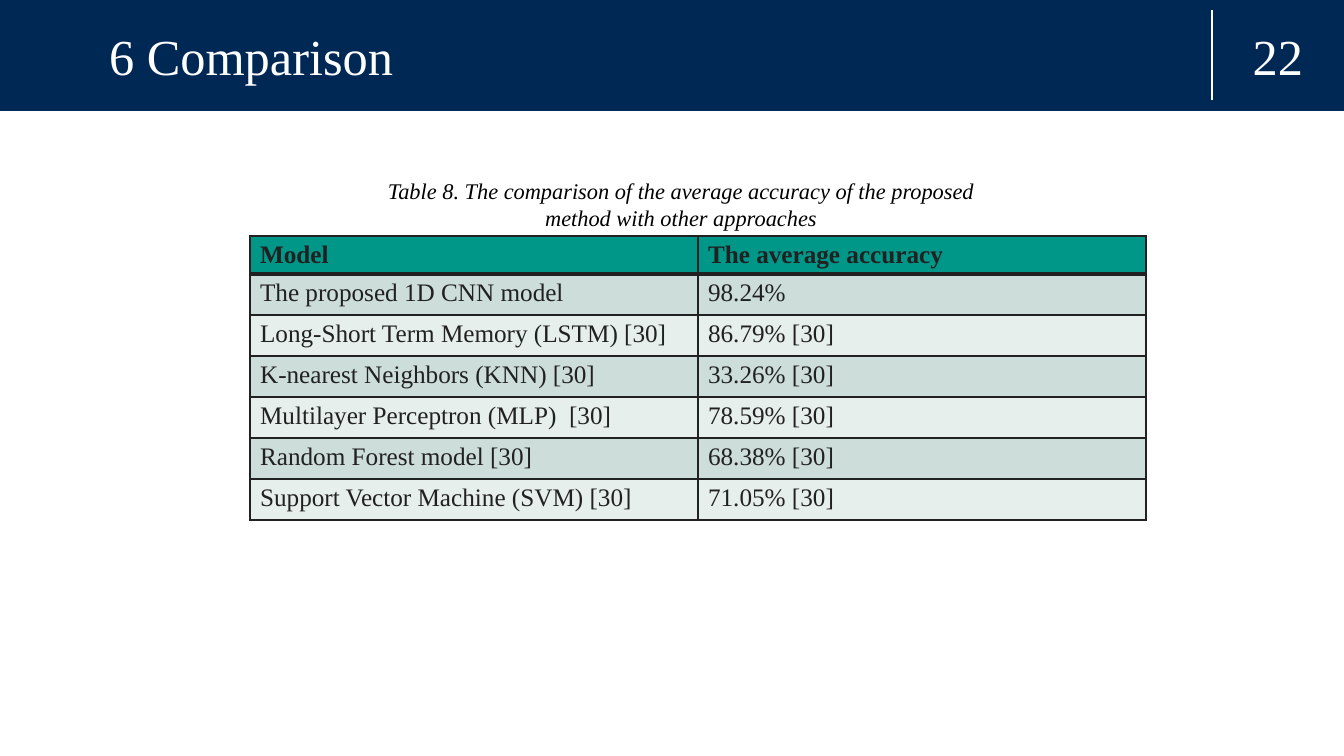
from dataclasses import dataclass

from lxml import etree
from pptx import Presentation
from pptx import util as u
from pptx.dml.color import RGBColor
from pptx.enum import shapes, text
from pptx.oxml.ns import qn

EMU_PER_PX = 914400 / 100.8


@dataclass(frozen=True)
class Theme:
    font: str = "Times New Roman"
    white: str = "FFFFFF"
    black: str = "000000"
    ink: str = "212121"
    navy: str = "002855"
    teal: str = "009688"
    bands: tuple[str, str] = ("CCDDDA", "E7EFED")
    heading_pt: int = 36
    table_pt: int = 18
    caption_pt: int = 16


@dataclass(frozen=True)
class Box:
    left: int
    top: int
    width: int
    height: int

    def emu(self) -> tuple[int, int, int, int]:
        return px(self.left), px(self.top), px(self.width), px(self.height)


@dataclass(frozen=True)
class Panel:
    box: Box
    color: str
    line_pt: float


@dataclass(frozen=True)
class Result:
    model: str
    accuracy: str


THEME = Theme()
PANELS = (
    Panel(Box(0, 111, 1344, 645), THEME.white, 2),
    Panel(Box(0, 0, 1344, 111), THEME.navy, 0.75),
)
TITLE_BOX = Box(74, 10, 1117, 90)
NUMBER_BOX = Box(1212, 10, 132, 90)
CAPTION_BOX = Box(345, 172, 672, 64)
TABLE_BOX = Box(250, 236, 896, 284)
HEADER_HEIGHT, ROW_HEIGHT = 38, 41
THIN_PT, THICK_PT = 1, 3
HEADER = Result("Model", "The average accuracy")
RESULTS = (
    Result("The proposed 1D CNN model", "98.24%"),
    Result("Long-Short Term Memory (LSTM) [30]", "86.79% [30]"),
    Result("K-nearest Neighbors (KNN) [30]", "33.26% [30]"),
    Result("Multilayer Perceptron (MLP)  [30]", "78.59% [30]"),
    Result("Random Forest model [30]", "68.38% [30]"),
    Result("Support Vector Machine (SVM) [30]", "71.05% [30]"),
)


def px(n: int) -> int:
    return round(n * EMU_PER_PX)


def rgb(color: str) -> RGBColor:
    return RGBColor.from_string(color)


def write(tf, content: str, *, size: int, color: str, bold: bool = False,
          italic: bool = False, align=text.PP_ALIGN.LEFT) -> None:
    p = tf.paragraphs[0]
    p.alignment = align
    r = p.add_run()
    r.text = content
    r.font.name, r.font.size = THEME.font, u.Pt(size)
    r.font.bold, r.font.italic = bold, italic
    r.font.color.rgb = rgb(color)


def center_vertically(tf, *, left: int = 10) -> None:
    tf.word_wrap = True
    tf.auto_size = text.MSO_AUTO_SIZE.NONE
    tf.vertical_anchor = text.MSO_ANCHOR.MIDDLE
    tf.margin_left = px(left)
    tf.margin_right = tf.margin_top = tf.margin_bottom = px(10)


def add_panel(s, panel: Panel) -> None:
    sp = s.shapes.add_shape(shapes.MSO_SHAPE.RECTANGLE, *panel.box.emu())
    sp.shadow.inherit = False
    sp.fill.solid()
    sp.fill.fore_color.rgb = rgb(panel.color)
    sp.line.color.rgb = rgb(panel.color)
    sp.line.width = u.Pt(panel.line_pt)


def add_divider(s, box: Box) -> None:
    """Draw a vertical rule along the left edge of the box."""
    x = px(box.left)
    line = s.shapes.add_connector(shapes.MSO_CONNECTOR.STRAIGHT, x,
                                  px(box.top + box.height), x, px(box.top))
    line.line.color.rgb = rgb(THEME.white)
    line.line.width = u.Pt(1.5)
    etree.SubElement(line.element.spPr, qn("a:effectLst"))


def set_borders(cell, *, top: float, bottom: float) -> None:
    tc_pr = cell._tc.get_or_add_tcPr()
    widths = {"lnL": THIN_PT, "lnR": THIN_PT, "lnT": top, "lnB": bottom}
    for side, width in widths.items():
        ln = etree.SubElement(tc_pr, qn(f"a:{side}"), w=str(u.Pt(width)))
        fill = etree.SubElement(ln, qn("a:solidFill"))
        etree.SubElement(fill, qn("a:srgbClr"), val=THEME.ink)


def add_results_table(s) -> None:
    rows = (HEADER, *RESULTS)
    table = s.shapes.add_table(len(rows), 2, *TABLE_BOX.emu()).table
    table.horz_banding = False
    for i, result in enumerate(rows):
        is_header = i == 0
        table.rows[i].height = px(HEADER_HEIGHT if is_header else ROW_HEIGHT)
        color = THEME.teal if is_header else THEME.bands[(i - 1) % 2]
        for j, content in enumerate((result.model, result.accuracy)):
            cell = table.cell(i, j)
            set_borders(cell, top=THICK_PT if i == 1 else THIN_PT,
                        bottom=THICK_PT if is_header else THIN_PT)
            cell.fill.solid()
            cell.fill.fore_color.rgb = rgb(color)
            write(cell.text_frame, content, size=THEME.table_pt,
                  color=THEME.ink, bold=is_header)


def place_title(s, content: str) -> None:
    title = s.shapes.title
    title.left, title.top, title.width, title.height = TITLE_BOX.emu()
    center_vertically(title.text_frame, left=35)
    write(title.text_frame, content, size=THEME.heading_pt, color=THEME.white)
    # Bring the title in front of the banner.
    title.element.getparent().append(title.element)


def main() -> None:
    prs = Presentation()
    prs.slide_width, prs.slide_height = px(1344), px(756)
    s = prs.slides.add_slide(prs.slide_layouts[5])
    s.background.fill.solid()
    s.background.fill.fore_color.rgb = rgb(THEME.ink)

    for panel in PANELS:
        add_panel(s, panel)
    add_divider(s, NUMBER_BOX)

    number = s.shapes.add_textbox(*NUMBER_BOX.emu()).text_frame
    center_vertically(number)
    write(number, "22", size=THEME.heading_pt, color=THEME.white,
          align=text.PP_ALIGN.CENTER)
    place_title(s, "6 Comparison")

    add_results_table(s)
    caption = s.shapes.add_textbox(*CAPTION_BOX.emu()).text_frame
    caption.word_wrap = True
    write(caption, "Table 8. The comparison of the average accuracy of the "
          "proposed method with other approaches", size=THEME.caption_pt,
          color=THEME.black, italic=True, align=text.PP_ALIGN.CENTER)
    prs.save("out.pptx")


if __name__ == "__main__":
    main()
